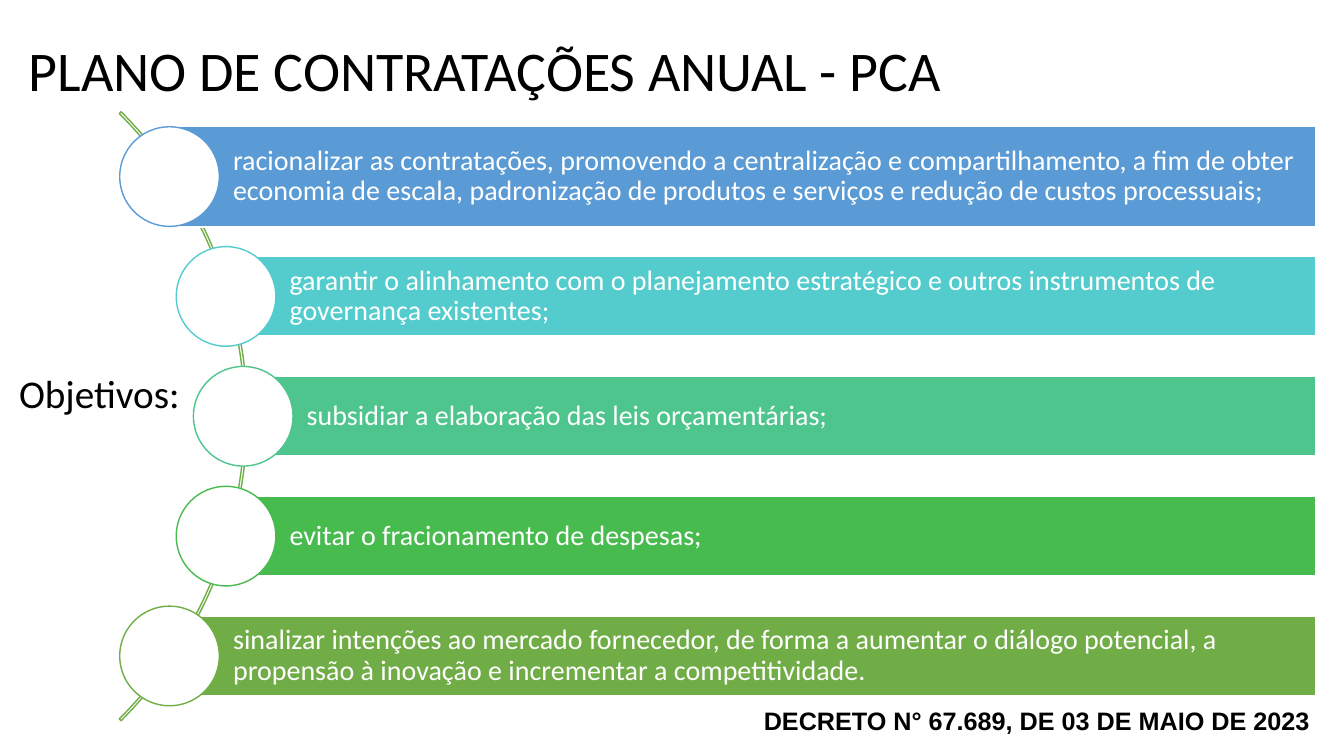
from dataclasses import dataclass
from math import sqrt

from pptx import Presentation
from pptx.dml.color import RGBColor
from pptx.enum.shapes import MSO_SHAPE
from pptx.enum.text import MSO_ANCHOR, PP_ALIGN
from pptx.util import Cm, Pt

RECT, OVAL, ARC = MSO_SHAPE.RECTANGLE, MSO_SHAPE.OVAL, MSO_SHAPE.BLOCK_ARC
TOP, MIDDLE = MSO_ANCHOR.TOP, MSO_ANCHOR.MIDDLE
LEFT = PP_ALIGN.LEFT

COLORS = {
    "black": "000000",
    "white": "FFFFFF",
    "blue": "5B9BD5",
    "cyan": "54CCCD",
    "teal": "4DC58D",
    "green": "48BB4F",
    "olive": "70AD47",
}

# Geometry in centimetres
ARC_X, ARC_Y, ARC_RADIUS = -4.62, 10.49, 10.85
ORBIT = 10.75  # radius on which the circle centres lie
PITCH = 3.02
CIRCLE = 2.51
BAR_RIGHT = 33.17


@dataclass
class Goal:
    text: str
    color: str
    height: float = 2.0


GOALS = [
    Goal("racionalizar as contratações, promovendo a centralização e compartilhamento, "
         "a fim de obter economia de escala, padronização de produtos e serviços e "
         "redução de custos processuais;", "blue", 2.54),
    Goal("garantir o alinhamento com o planejamento estratégico e outros instrumentos "
         "de governança existentes;", "cyan"),
    Goal("subsidiar a elaboração das leis orçamentárias;", "teal"),
    Goal("evitar o fracionamento de despesas;", "green"),
    Goal("sinalizar intenções ao mercado fornecedor, de forma a aumentar o diálogo "
         "potencial, a propensão à inovação e incrementar a competitividade.", "olive"),
]


def rgb(name: str) -> RGBColor:
    return RGBColor.from_string(COLORS[name])


def write(sp, text: str, *, size: float, color: str = "black", font: str = "Calibri",
          bold: bool = False, anchor=TOP, wrap: bool = False, spacing: float = 1.0,
          insets: tuple = (0.25, 0.13, 0.25, 0.13)) -> None:
    tf = sp.text_frame
    tf.word_wrap = wrap
    tf.vertical_anchor = anchor
    tf.margin_left, tf.margin_top, tf.margin_right, tf.margin_bottom = map(Cm, insets)
    p = tf.paragraphs[0]
    p.alignment = LEFT
    p.line_spacing = spacing
    r = p.add_run()
    r.text = text
    r.font.size, r.font.name, r.font.bold = Pt(size), font, bold
    r.font.color.rgb = rgb(color)


def add_outlined(s, kind, left: float, top: float, width: float, height: float,
                 line: str, fill: str = ""):
    sp = s.shapes.add_shape(kind, Cm(left), Cm(top), Cm(width), Cm(height))
    sp.shadow.inherit = False
    if fill:
        sp.fill.solid()
        sp.fill.fore_color.rgb = rgb(fill)
    else:
        sp.fill.background()
    sp.line.color.rgb = rgb(line)
    sp.line.width = Pt(1)
    return sp


def add_goal(s, goal: Goal, steps: int) -> None:
    """Draw a bar and its circle, a number of steps below the arc's middle."""
    dy = steps * PITCH
    x, y = ARC_X + sqrt(ORBIT ** 2 - dy ** 2), ARC_Y + dy
    bar = add_outlined(s, RECT, x, y - goal.height / 2, BAR_RIGHT - x, goal.height,
                       "white", goal.color)
    write(bar, goal.text, size=20, color="white", anchor=MIDDLE, wrap=True,
          spacing=0.9, insets=(1.6, 0.16, 0.16, 0.16))
    add_outlined(s, OVAL, x - CIRCLE / 2, y - CIRCLE / 2, CIRCLE, CIRCLE,
                 goal.color, "white")


def add_label(s, text: str, left: float, top: float, width: float, height: float,
              **style) -> None:
    sp = s.shapes.add_textbox(Cm(left), Cm(top), Cm(width), Cm(height))
    write(sp, text, **style)


def main() -> None:
    prs = Presentation()
    prs.slide_width, prs.slide_height = Cm(33.87), Cm(19.05)
    s = prs.slides.add_slide(prs.slide_layouts[5])

    # Title
    title = s.shapes.title
    title.left, title.top, title.width, title.height = Cm(0.48), Cm(0.76), Cm(23.75), Cm(1.96)
    write(title, "PLANO DE CONTRATAÇÕES ANUAL - PCA", size=40)

    # Arc behind the goals
    arc = add_outlined(s, ARC, ARC_X - ARC_RADIUS, ARC_Y - ARC_RADIUS,
                       2 * ARC_RADIUS, 2 * ARC_RADIUS, "olive")
    for i, value in enumerate((189, 27, 0.003)):
        arc.adjustments[i] = value

    # Goals, centred on the arc's middle
    for i, goal in enumerate(GOALS):
        add_goal(s, goal, i - len(GOALS) // 2)

    # Source and side label
    add_label(s, "DECRETO N° 67.689, DE 03 DE MAIO DE 2023", 19.0, 17.65, 14.4, 1.03,
              size=18, font="Arial", bold=True)
    add_label(s, "Objetivos:", 0.23, 9.17, 4.62, 1.45, size=28)

    prs.save("out.pptx")


if __name__ == "__main__":
    main()
